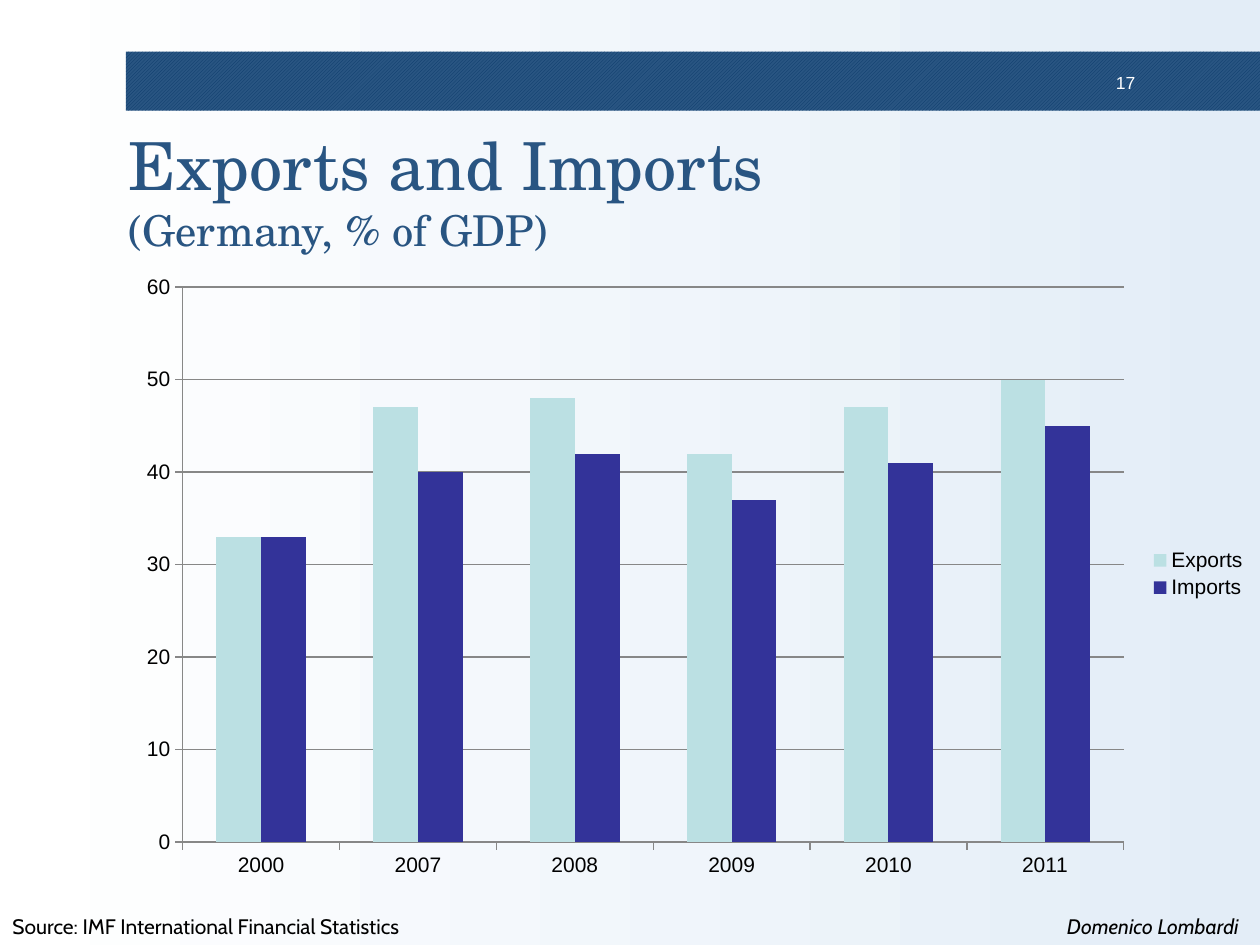
from dataclasses import dataclass

from lxml import etree
from pptx import Presentation
from pptx.chart.data import CategoryChartData
from pptx.dml.color import RGBColor
from pptx.enum.chart import XL_CHART_TYPE, XL_LEGEND_POSITION, XL_TICK_MARK
from pptx.enum.dml import MSO_PATTERN
from pptx.enum.shapes import MSO_SHAPE
from pptx.enum.text import MSO_ANCHOR, PP_ALIGN
from pptx.oxml.ns import qn
from pptx.util import Pt

CLUSTERED = XL_CHART_TYPE.COLUMN_CLUSTERED
LEGEND_RIGHT = XL_LEGEND_POSITION.RIGHT
TICK_OUTSIDE, TICK_NONE = XL_TICK_MARK.OUTSIDE, XL_TICK_MARK.NONE
DIAGONAL = MSO_PATTERN.LIGHT_UPWARD_DIAGONAL
RECTANGLE = MSO_SHAPE.RECTANGLE
TOP, MIDDLE = MSO_ANCHOR.TOP, MSO_ANCHOR.MIDDLE
LEFT, CENTER, RIGHT = PP_ALIGN.LEFT, PP_ALIGN.CENTER, PP_ALIGN.RIGHT


@dataclass(frozen=True)
class Theme:
    white: RGBColor = RGBColor.from_string("FFFFFF")
    black: RGBColor = RGBColor.from_string("000000")
    pale_blue: RGBColor = RGBColor.from_string("E3EDF7")
    blue: RGBColor = RGBColor.from_string("295582")
    dark_blue: RGBColor = RGBColor.from_string("083868")
    grid: RGBColor = RGBColor.from_string("878787")
    exports: RGBColor = RGBColor.from_string("BBE0E3")
    imports: RGBColor = RGBColor.from_string("333399")
    title_font: str = "TeX Gyre Schola"
    chart_font: str = "Arial"
    footer_font: str = "Cabin"
    title_size: float = 37.8
    subtitle_size: float = 24.3
    body_size: float = 12
    number_size: float = 10


THEME = Theme()
YEARS = ["2000", "2007", "2008", "2009", "2010", "2011"]
SERIES = [
    ("Exports", [33, 47, 48, 42, 47, 50], THEME.exports),
    ("Imports", [33, 40, 42, 37, 41, 45], THEME.imports),
]
# Plot area as fractions of the chart frame
PLOT_AREA = {"x": 0.05, "y": 0.04, "w": 0.83, "h": 0.89}


def set_font(font, name, size, color, **extra):
    font.color.rgb = color
    for key, value in {"name": name, "size": Pt(size), **extra}.items():
        setattr(font, key, value)


def add_text(page, box, lines, align=LEFT, anchor=TOP, insets=(7.2, 3.6), wrap=True):
    """Add one paragraph; lines holds (text, font settings), with breaks between."""
    frame = page.shapes.add_textbox(*map(Pt, box)).text_frame
    side, edge = map(Pt, insets)
    settings = {
        "margin_left": side, "margin_right": side,
        "margin_top": edge, "margin_bottom": edge,
        "word_wrap": wrap, "vertical_anchor": anchor,
    }
    for key, value in settings.items():
        setattr(frame, key, value)
    para = frame.paragraphs[0]
    para.alignment = align
    for index, (text, font) in enumerate(lines):
        if index:
            para.add_line_break()
        span = para.add_run()
        span.text = text
        set_font(span.font, **font)


def paint_background(page):
    fill = page.background.fill
    fill.gradient()
    fill.gradient_angle = 0
    for stop, color in zip(fill.gradient_stops, (THEME.white, THEME.pale_blue)):
        stop.color.rgb = color


def add_banner(page, box, number):
    left, top, width, height = box
    band = page.shapes.add_shape(RECTANGLE, *map(Pt, box))
    band.shadow.inherit = False
    band.line.fill.background()
    band.fill.patterned()
    band.fill.pattern = DIAGONAL
    band.fill.fore_color.rgb = THEME.dark_blue
    band.fill.back_color.rgb = THEME.blue
    font = {"name": THEME.chart_font, "size": THEME.number_size, "color": THEME.white}
    number_box = (left + width - 95.8, top + 9.4, 29.5, 16.6)
    add_text(page, number_box, [(number, font)], RIGHT, insets=(5, 2.5))


def add_heading(page, box, title, subtitle):
    font = {"name": THEME.title_font, "color": THEME.blue}
    lines = [
        (title, {**font, "size": THEME.title_size}),
        (subtitle, {**font, "size": THEME.subtitle_size}),
    ]
    add_text(page, box, lines, anchor=MIDDLE, insets=(2.9, 2.9))


def fix_plot_area(chart):
    """Pin the inner plot area, so that the legend does not move it."""
    plot_area = chart._chartSpace.chart.plotArea
    for old in plot_area.findall(qn("c:layout")):
        plot_area.remove(old)
    layout = etree.Element(qn("c:layout"))
    manual = etree.SubElement(layout, qn("c:manualLayout"))
    values = {"layoutTarget": "inner", "xMode": "edge", "yMode": "edge", **PLOT_AREA}
    for tag, value in values.items():
        etree.SubElement(manual, qn(f"c:{tag}")).set("val", str(value))
    plot_area.insert(0, layout)


def add_trade_chart(page, box):
    data = CategoryChartData(number_format="General")
    data.categories = YEARS
    for name, values, _ in SERIES:
        data.add_series(name, values)
    chart = page.shapes.add_chart(CLUSTERED, *map(Pt, box), data).chart
    set_font(chart.font, THEME.chart_font, THEME.body_size, THEME.black)
    chart.has_title = False
    chart.has_legend = True
    chart.legend.position = LEGEND_RIGHT
    chart.legend.include_in_layout = False
    fix_plot_area(chart)

    plot = chart.plots[0]
    plot.gap_width = 150
    plot.overlap = 0
    plot.vary_by_categories = False
    for series, (_, _, color) in zip(plot.series, SERIES):
        series.format.fill.solid()
        series.format.fill.fore_color.rgb = color

    value_axis = chart.value_axis
    scale = {"minimum_scale": 0, "maximum_scale": 60, "major_unit": 10}
    for key, value in scale.items():
        setattr(value_axis, key, value)
    value_axis.has_major_gridlines = True
    for axis in (chart.category_axis, value_axis):
        axis.major_tick_mark = TICK_OUTSIDE
        axis.minor_tick_mark = TICK_NONE
    for item in (chart.category_axis, value_axis, value_axis.major_gridlines):
        item.format.line.color.rgb = THEME.grid
        item.format.line.width = Pt(0.75)


def add_footer(page, box, source, author):
    left, top, width, height = box
    font = {"name": THEME.footer_font, "size": THEME.body_size, "color": THEME.black}
    source_width, author_width = 254.2, 122.4
    add_text(page, (left, top, source_width, height), [(source, font)], wrap=False)
    author_box = (left + width - author_width, top, author_width, height)
    add_text(page, author_box, [(author, {**font, "italic": True})], CENTER, wrap=False)


def main():
    deck = Presentation()
    deck.slide_width, deck.slide_height = Pt(720), Pt(540)
    page = deck.slides.add_slide(deck.slide_layouts[6])
    paint_background(page)
    add_banner(page, (72, 29.5, 648, 33.8), "17")
    add_heading(page, (70.6, 67.7, 579.6, 81.4), "Exports and Imports", "(Germany, % of GDP)")
    add_trade_chart(page, (72, 149.8, 648, 356.4))
    add_footer(page, (0, 518.4, 720, 21.6),
               "Source: IMF International Financial Statistics", "Domenico Lombardi")
    deck.save("out.pptx")


if __name__ == "__main__":
    main()
